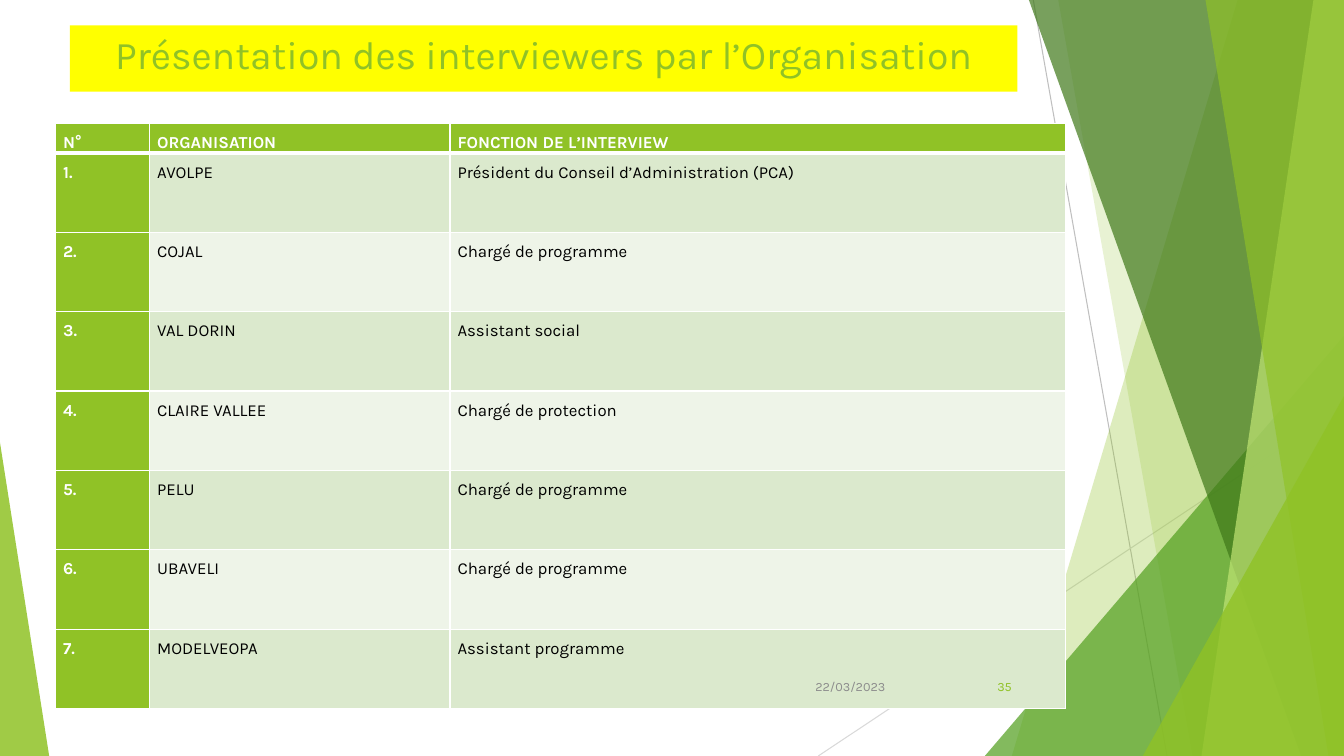
from lxml.etree import SubElement
from pptx import Presentation
from pptx.dml.color import RGBColor
from pptx.enum.shapes import MSO_CONNECTOR, MSO_SHAPE
from pptx.enum.text import MSO_ANCHOR, PP_ALIGN
from pptx.oxml.ns import qn
from pptx.util import Cm, Pt

WIDTH, HEIGHT = 33.87, 19.05
FONT = "Karla"
LIME = RGBColor(0x90, 0xC2, 0x26)
GREEN = RGBColor(0x54, 0xA0, 0x21)
DARK_GREEN = RGBColor(0x3F, 0x78, 0x19)
PALE_LIME = RGBColor(0xC0, 0xE4, 0x74)
YELLOW = RGBColor(0xFF, 0xFF, 0x00)
WHITE = RGBColor(0xFF, 0xFF, 0xFF)
BLACK = RGBColor(0, 0, 0)
GREY = RGBColor(0x8C, 0x8C, 0x8C)
LINE_GREY = RGBColor(0xBF, 0xBF, 0xBF)
LINE_PALE = RGBColor(0xD9, 0xD9, 0xD9)
ROW_FILLS = (RGBColor(0xDB, 0xE9, 0xCD), RGBColor(0xEE, 0xF4, 0xE8))

COLUMN_WIDTHS = (2.37, 7.57, 15.51)
HEADER_HEIGHT, ROW_HEIGHT = 0.74, 2.0
HEADERS = ("N°", "ORGANISATION", "FONCTION DE L’INTERVIEW")
INTERVIEWERS = (
    ("AVOLPE", "Président du Conseil d’Administration (PCA)"),
    ("COJAL", "Chargé de programme"),
    ("VAL DORIN", "Assistant social"),
    ("CLAIRE VALLEE", "Chargé de protection"),
    ("PELU", "Chargé de programme"),
    ("UBAVELI", "Chargé de programme"),
    ("MODELVEOPA", "Assistant programme"),
)


def write_text(text_frame, text, size=12, color=BLACK, bold=False,
               align=PP_ALIGN.LEFT, spacing=None):
    paragraph = text_frame.paragraphs[0]
    paragraph.alignment = align
    paragraph.line_spacing = spacing
    run = paragraph.add_run()
    run.text = text
    run.font.name = FONT
    run.font.size = Pt(size)
    run.font.bold = bold
    run.font.color.rgb = color


def paint(shape, color, opacity):
    shape.shadow.inherit = False
    shape.fill.solid()
    shape.fill.fore_color.rgb = color
    shape.line.fill.background()
    color_element = shape._element.spPr.find(qn("a:solidFill"))[0]
    SubElement(color_element, qn("a:alpha"), val=str(opacity * 1000))


def add_line(slide, start, end, color):
    line = slide.shapes.add_connector(
        MSO_CONNECTOR.STRAIGHT, *(Cm(value) for value in start + end))
    line.line.color.rgb = color
    line.line.width = Pt(0.75)
    SubElement(line._element.spPr, qn("a:effectLst"))


def add_band(slide, top_left, bottom_left, color, opacity):
    """Full-height band from a slanted left side to the slide's right edge."""
    builder = slide.shapes.build_freeform(Cm(top_left), 0)
    builder.add_line_segments([(Cm(WIDTH), 0), (Cm(WIDTH), Cm(HEIGHT)),
                               (Cm(bottom_left), Cm(HEIGHT))], close=True)
    paint(builder.convert_to_shape(), color, opacity)


def add_corner(slide, left, width, height, apex, color, opacity):
    """Triangle standing on the bottom edge of the slide."""
    triangle = slide.shapes.add_shape(
        MSO_SHAPE.ISOSCELES_TRIANGLE, Cm(left), Cm(HEIGHT - height),
        Cm(width), Cm(height))
    triangle.adjustments[0] = apex
    paint(triangle, color, opacity)


def add_background(slide):
    add_line(slide, (26.04, 0), (29.41, HEIGHT), LINE_GREY)
    add_line(slide, (WIDTH, 10.24), (20.62, HEIGHT), LINE_PALE)
    add_band(slide, 31.19, 25.5, LIME, 30)
    add_band(slide, 26.67, 30.05, LIME, 20)
    add_corner(slide, 24.82, 9.05, 10.59, 1, GREEN, 72)
    add_band(slide, 25.93, 32.79, DARK_GREEN, 70)
    add_band(slide, 33.1, 30.28, PALE_LIME, 70)
    add_band(slide, 30.38, 33.48, LIME, 65)
    add_corner(slide, 28.8, 5.07, 9.07, 1, LIME, 80)
    add_corner(slide, 0, 1.24, 7.9, 0, LIME, 85)


def set_title(slide, text):
    title = slide.shapes.title
    title.left, title.top, title.width, title.height = (
        Cm(value) for value in (1.76, 0.64, 23.88, 1.67))
    title.fill.solid()
    title.fill.fore_color.rgb = YELLOW
    title.text_frame.vertical_anchor = MSO_ANCHOR.TOP
    write_text(title.text_frame, text, size=28, color=LIME,
               align=PP_ALIGN.CENTER)


def set_borders(cell, top, bottom):
    properties = cell._tc.get_or_add_tcPr()
    for side, width in (("L", 1), ("R", 1), ("T", top), ("B", bottom)):
        border = SubElement(properties, qn(f"a:ln{side}"), w=str(Pt(width)))
        fill = SubElement(border, qn("a:solidFill"))
        SubElement(fill, qn("a:srgbClr"), val=str(WHITE))


def fill_cell(cell, text, row, column):
    is_heading = row == 0 or column == 0
    cell.margin_left = cell.margin_right = Cm(0.19)
    cell.margin_top = cell.margin_bottom = 0
    set_borders(cell, top=3 if row == 1 else 1, bottom=3 if row == 0 else 1)
    cell.fill.solid()
    cell.fill.fore_color.rgb = LIME if is_heading else ROW_FILLS[(row - 1) % 2]
    write_text(cell.text_frame, text, color=WHITE if is_heading else BLACK,
               bold=is_heading, align=PP_ALIGN.JUSTIFY, spacing=1.5)


def add_interviewer_table(slide):
    rows = [HEADERS] + [(f"{number}.", *interviewer) for number, interviewer
                        in enumerate(INTERVIEWERS, start=1)]
    table_height = HEADER_HEIGHT + ROW_HEIGHT * len(INTERVIEWERS)
    table = slide.shapes.add_table(
        len(rows), len(HEADERS), Cm(1.4), Cm(3.11),
        Cm(sum(COLUMN_WIDTHS)), Cm(table_height)).table
    table.first_col = True
    for column, width in zip(table.columns, COLUMN_WIDTHS):
        column.width = Cm(width)
    for row, texts in enumerate(rows):
        table.rows[row].height = Cm(ROW_HEIGHT if row else HEADER_HEIGHT)
        for column, text in enumerate(texts):
            fill_cell(table.cell(row, column), text, row, column)


def add_footer(slide, text, left, width, color):
    box = slide.shapes.add_textbox(Cm(left), Cm(16.79), Cm(width), Cm(1.02))
    box.text_frame.word_wrap = True
    box.text_frame.vertical_anchor = MSO_ANCHOR.MIDDLE
    write_text(box.text_frame, text, size=9, color=color,
               align=PP_ALIGN.RIGHT)


def main():
    presentation = Presentation()
    presentation.slide_width = Cm(WIDTH)
    presentation.slide_height = Cm(HEIGHT)
    title_only = presentation.slide_layouts[5]
    slide = presentation.slides.add_slide(title_only)

    # Decorative bands and corners
    add_background(slide)
    # Title and table
    set_title(slide, "Présentation des interviewers par l’Organisation")
    add_interviewer_table(slide)
    # Page number and date
    add_footer(slide, "35", 23.85, 1.9, LIME)
    add_footer(slide, "22/03/2023", 20.02, 2.54, GREY)

    presentation.save("out.pptx")


if __name__ == "__main__":
    main()
